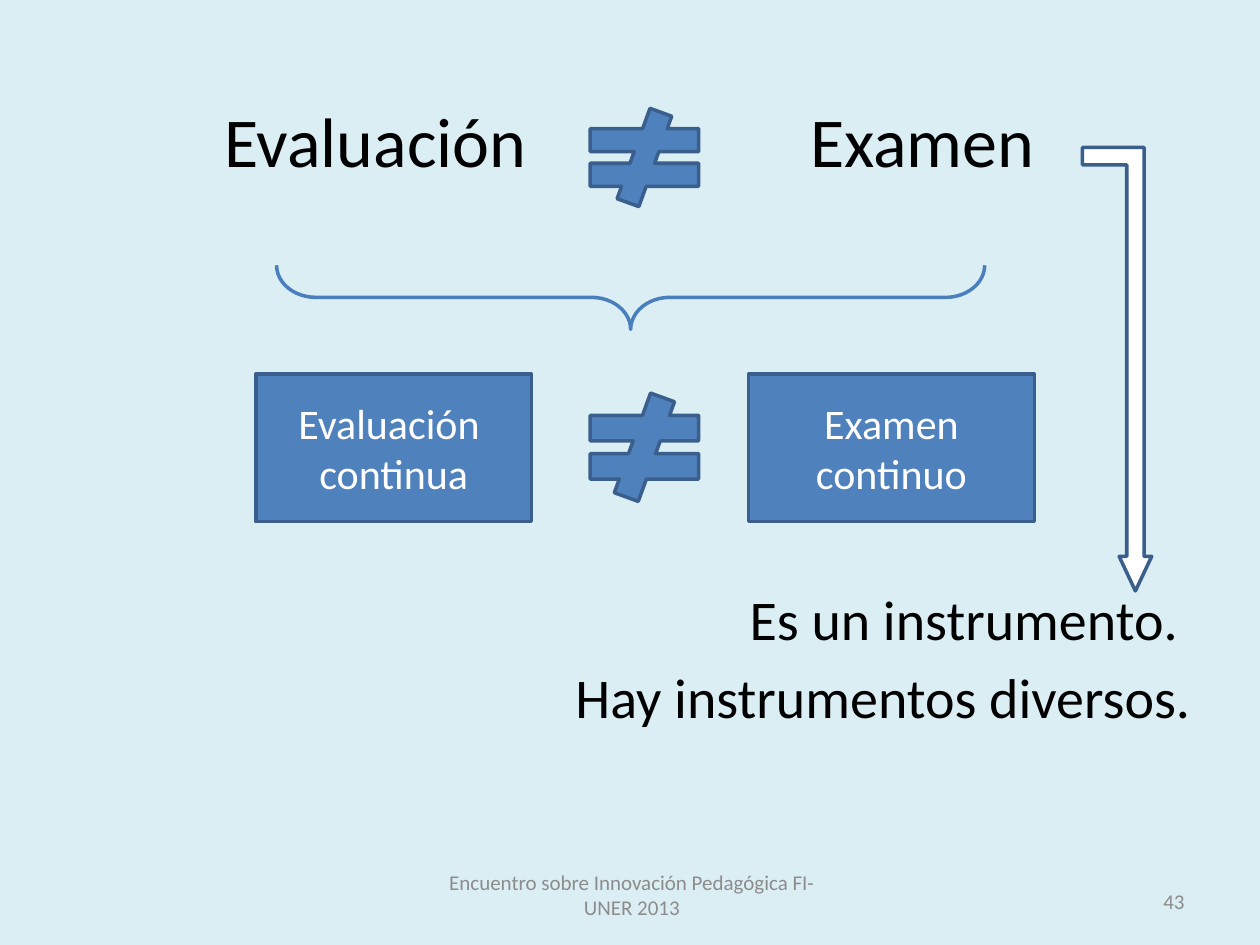
from pptx import Presentation
from pptx.dml.color import RGBColor
from pptx.enum.shapes import MSO_SHAPE
from pptx.enum.text import MSO_ANCHOR, PP_ALIGN
from pptx.oxml.ns import qn
from pptx.util import Inches, Pt
from lxml.etree import SubElement

BACKGROUND, BLUE, EDGE, BRACE = "DBEEF4", "4F81BD", "3A5F8C", "4B7EBC"
BLACK, WHITE, GREY = "000000", "FFFFFF", "8C8C8C"
CENTER, RIGHT, LEFT = PP_ALIGN.CENTER, PP_ALIGN.RIGHT, PP_ALIGN.LEFT

TITLE = "Evaluación\tExamen"
TITLE_TAB = 4.65
TEXTS = [
    (["Es un instrumento. ", "Hay instrumentos diversos."],
     (0.55, 4.59, 9, 1.4), 32, BLACK, RIGHT, MSO_ANCHOR.TOP),
    (["43"], (7.17, 6.95, 2.33, 0.4), 12, GREY, RIGHT, MSO_ANCHOR.MIDDLE),
    (["Encuentro sobre Innovación Pedagógica FI-UNER 2013"],
     (3.43, 6.9, 3.17, 0.4), 12, GREY, CENTER, MSO_ANCHOR.MIDDLE),
]
NOT_EQUALS = [(4.53, 0.86, 1.17, 0.78), (4.53, 3.12, 1.17, 0.86)]
BOXES = [
    (["Examen continuo"], (5.94, 2.97, 2.27, 1.17)),
    (["Evaluación ", "continua"], (2.03, 2.97, 2.19, 1.17)),
]


def color(value):
    return RGBColor.from_string(value)


def write(shape, lines, size, ink, align, anchor, gap=0):
    tf = shape.text_frame
    tf.word_wrap = True
    tf.vertical_anchor = anchor
    for i, line in enumerate(lines):
        p = tf.paragraphs[0] if i == 0 else tf.add_paragraph()
        p.alignment = align
        p.space_before = Pt(gap if i else 0)
        r = p.add_run()
        r.text = line
        r.font.name = "Calibri"
        r.font.size = Pt(size)
        r.font.color.rgb = color(ink)


def draw(kind, place, fill, line, adjustments=()):
    sp = s.shapes.add_shape(kind, *map(Inches, place))
    sp.shadow.inherit = False
    if fill:
        sp.fill.solid()
        sp.fill.fore_color.rgb = color(fill)
    else:
        sp.fill.background()
    sp.line.color.rgb = color(line)
    sp.line.width = Pt(2)
    for i, value in enumerate(adjustments):
        sp.adjustments[i] = value
    return sp


prs = Presentation()
prs.slide_width, prs.slide_height = Inches(10), Inches(7.5)
s = prs.slides.add_slide(prs.slide_layouts[5])
s.background.fill.solid()
s.background.fill.fore_color.rgb = color(BACKGROUND)

title = s.shapes.title
title.left, title.top, title.width, title.height = map(Inches, (1.68, 0.72, 7, 0.9))
write(title, [TITLE], 40, BLACK, LEFT, MSO_ANCHOR.TOP)
tabs = SubElement(title.text_frame.paragraphs[0]._p.get_or_add_pPr(), qn("a:tabLst"))
SubElement(tabs, qn("a:tab"), pos=str(Inches(TITLE_TAB)), algn="l")

for lines, place, size, ink, align, anchor in TEXTS:
    box = s.shapes.add_textbox(*map(Inches, place))
    write(box, lines, size, ink, align, anchor, gap=size * 0.2)

for place in NOT_EQUALS:
    draw(MSO_SHAPE.MATH_NOT_EQUAL, place, BLUE, EDGE, (0.235, 66, 0.118))

for lines, place in BOXES:
    box = draw(MSO_SHAPE.RECTANGLE, place, BLUE, EDGE)
    write(box, lines, 24, WHITE, CENTER, MSO_ANCHOR.MIDDLE)

brace = draw(MSO_SHAPE.RIGHT_BRACE, (4.75, -0.45, 0.51, 5.62), None, BRACE, (0.61, 0.5))
brace.rotation = 90

arrow = draw(MSO_SHAPE.BENT_UP_ARROW, (8.59, 1.17, 0.55, 3.52), WHITE, EDGE,
             (0.25, 0.235, 0.5))
arrow.rotation = 180
arrow._element.spPr.xfrm.set("flipH", "1")

prs.save("out.pptx")
